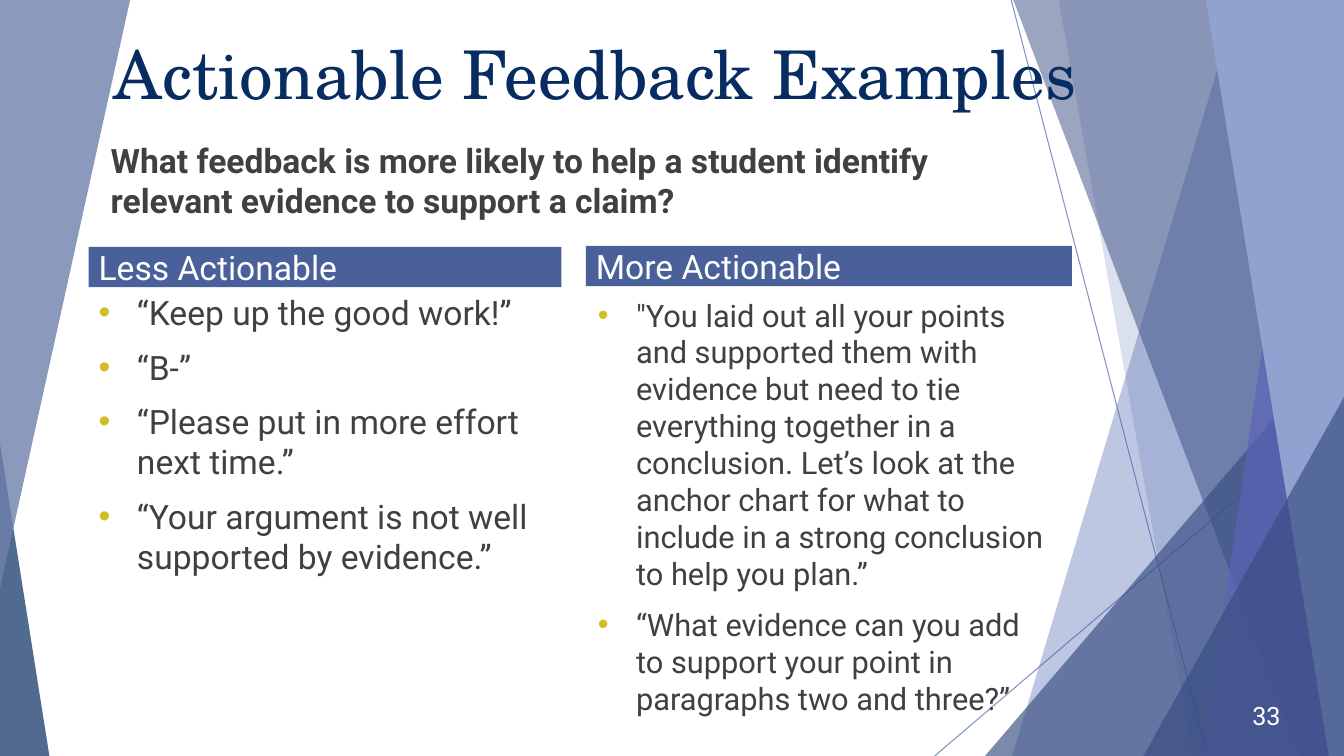
from lxml import etree
from pptx import Presentation
from pptx import util as u
from pptx.dml.color import RGBColor
from pptx.enum import shapes, text
from pptx.oxml.ns import qn

WIDTH, HEIGHT = u.Inches(13.33), u.Inches(7.5)
COLUMNS = ROWS = 100
BODY_FONT, TITLE_FONT = "Roboto", "TeX Gyre Schola"
COLORS = {
    "blue": "4A66AC", "deep": "384C81", "violet": "5C64B7", "sky": "90A2CF",
    "navy": "072C62", "slate": "6F81AC", "header": "4A609A",
    "body": "404040", "bullet": "D2BD24", "white": "FFFFFF",
}
# Left edge at the top, left edge at the bottom, colour, opacity in percent
BANDS = [
    (92.12, 75.32, "blue", 36),
    (78.77, 88.75, "blue", 20),
    (75.39, 96.7, "deep", 50),
    (97.75, 89.42, "violet", 70),
    (89.72, 98.87, "sky", 100),
]
LESS_ACTIONABLE = [
    "“Keep up the good work!”",
    "“B-”",
    "“Please put in more effort next time.”",
    "“Your argument is not well supported by evidence.”",
]
MORE_ACTIONABLE = [
    "\"You laid out all your points and supported them with evidence "
    "but need to tie everything together in a conclusion. Let’s look at "
    "the anchor chart for what to include in a strong conclusion to help "
    "you plan.”",
    "“What evidence can you add to support your point in paragraphs two "
    "and three?”",
]


def col(count):
    return round(WIDTH * count / COLUMNS)


def row(count):
    return round(HEIGHT * count / ROWS)


def area(left, top, width, height):
    return col(left), row(top), col(width), row(height)


def rgb(name):
    return RGBColor.from_string(COLORS[name])


def set_opacity(shape, percent):
    """Make every explicit colour of the shape partly transparent."""
    for color in shape.element.iter(qn("a:srgbClr")):
        etree.SubElement(color, qn("a:alpha"), val=str(percent * 1000))


def paint(shape, color, opacity=100):
    shape.shadow.inherit = False
    shape.fill.solid()
    shape.fill.fore_color.rgb = rgb(color)
    shape.line.fill.background()
    if opacity < 100:
        set_opacity(shape, opacity)


def add_thin_line(page, start, end):
    line = page.shapes.add_connector(
        shapes.MSO_CONNECTOR.STRAIGHT,
        col(start[0]), row(start[1]), col(end[0]), row(end[1]))
    line.line.color.rgb = rgb("blue")
    line.line.width = u.Pt(0.75)
    set_opacity(line, 70)
    etree.SubElement(line.element.spPr, qn("a:effectLst"))


def add_band(page, top_left, bottom_left, color, opacity):
    """Fill from a slanted left edge to the right side of the slide."""
    outline = page.shapes.build_freeform(col(top_left), 0)
    outline.add_line_segments(
        [(WIDTH, 0), (WIDTH, HEIGHT), (col(bottom_left), HEIGHT)], close=True)
    paint(outline.convert_to_shape(), color, opacity)


def add_triangle(page, place, apex, color, opacity, rotation=0):
    triangle = page.shapes.add_shape(
        shapes.MSO_SHAPE.ISOSCELES_TRIANGLE, *area(*place))
    triangle.adjustments[0] = apex
    triangle.rotation = rotation
    paint(triangle, color, opacity)


def add_backdrop(page):
    add_thin_line(page, (75.24, 0), (89.87, 100))
    add_thin_line(page, (100, 53.87), (69.54, 100))
    for band in BANDS[:2]:
        add_band(page, *band)
    add_triangle(page, (73.29, 44.53, 26.71, 55.47), 1, "deep", 66)
    for band in BANDS[2:]:
        add_band(page, *band)
    add_triangle(page, (85.07, 52.53, 14.93, 47.47), 1, "deep", 66)
    add_triangle(page, (0, 58.67, 3.68, 41.33), 0, "navy", 70)
    add_triangle(page, (0, 0, 9.68, 77.87), 1, "slate", 80, rotation=180)


def add_bullet(para):
    properties = para._p.get_or_add_pPr()
    indent = u.Inches(0.38)
    properties.set("marL", str(indent))
    properties.set("indent", str(-indent))
    color = etree.SubElement(properties, qn("a:buClr"))
    etree.SubElement(color, qn("a:srgbClr"), val=COLORS["bullet"])
    etree.SubElement(properties, qn("a:buFont"), typeface="Arial")
    etree.SubElement(properties, qn("a:buChar"), char="•")


def write(shape, lines, size, color, font=BODY_FONT, bold=False, bullets=False,
          align=text.PP_ALIGN.LEFT, anchor=text.MSO_ANCHOR.TOP):
    frame = shape.text_frame
    frame.word_wrap = True
    frame.auto_size = text.MSO_AUTO_SIZE.NONE
    frame.vertical_anchor = anchor
    frame.text = "\n".join(lines)
    for para in frame.paragraphs:
        if bullets:
            add_bullet(para)
        para.alignment = align
        para.space_before = u.Pt(10 if shape.has_text_frame and bullets else 0)
        para.font.name = font
        para.font.size = u.Pt(size)
        para.font.bold = bold
        para.font.color.rgb = rgb(color)


def add_title(page, place, words):
    title = page.shapes.title
    title.left, title.top, title.width, title.height = area(*place)
    write(title, [words], 48, "navy", font=TITLE_FONT)


def add_text(page, place, lines, size, color, **style):
    write(page.shapes.add_textbox(*area(*place)), lines, size, color, **style)


def add_header(page, place, words):
    bar = page.shapes.add_shape(shapes.MSO_SHAPE.RECTANGLE, *area(*place))
    paint(bar, "header")
    write(bar, [words], 24, "white", anchor=text.MSO_ANCHOR.MIDDLE)


def main():
    deck = Presentation()
    deck.slide_width, deck.slide_height = WIDTH, HEIGHT
    page = deck.slides.add_slide(deck.slide_layouts.get_by_name("Title Only"))
    add_backdrop(page)

    # The title stands in front of the backdrop
    page.shapes.title.element.getparent().append(page.shapes.title.element)
    add_title(page, (7.73, 3.6, 73.74, 19.2), "Actionable Feedback Examples")
    add_text(page, (7.5, 17.87, 69.84, 14.13),
             ["What feedback is more likely to help a student identify "
              "relevant evidence to support a claim?"],
             24, "body", bold=True)

    add_header(page, (6.6, 32.67, 35.18, 5.33), "Less Actionable")
    add_text(page, (6.6, 38, 35.18, 27.6), LESS_ACTIONABLE, 24, "body",
             bullets=True)
    add_header(page, (43.59, 32.53, 36.16, 5.33), "More Actionable")
    add_text(page, (43.74, 38.53, 35.48, 27.6), MORE_ACTIONABLE, 22, "body",
             bullets=True)

    add_text(page, (90.4, 92, 5.63, 5.33), ["33"], 18, "white",
             align=text.PP_ALIGN.RIGHT, anchor=text.MSO_ANCHOR.MIDDLE)
    deck.save("out.pptx")


if __name__ == "__main__":
    main()
